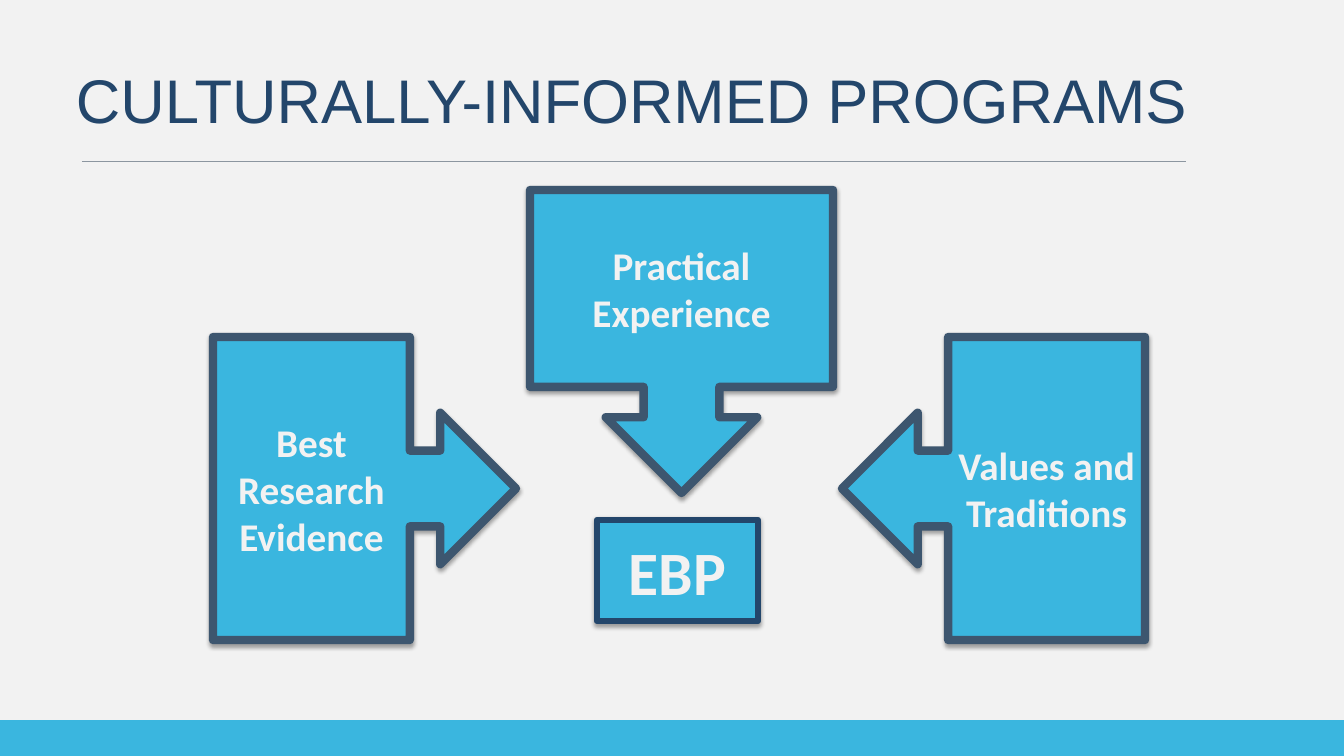
from lxml import etree
from pptx import Presentation
from pptx.dml.color import RGBColor
from pptx.enum.shapes import MSO_CONNECTOR, MSO_SHAPE as SHAPE
from pptx.enum.text import MSO_ANCHOR as ANCHOR, PP_ALIGN as ALIGN
from pptx.oxml import parse_xml
from pptx.oxml.ns import nsdecls, qn
from pptx.util import Emu, Pt

PX = 914400 / 100.8
BLUE, NAVY, SLATE, PALE, GRAY = "3AB6DF", "23466B", "3D566F", "F2F2F2", "8C96A0"
SHADOW = (
    f'<a:outerShdw {nsdecls("a")} blurRad="40000" dist="23000" dir="5400000" rotWithShape="0">'
    '<a:srgbClr val="000000"><a:alpha val="35000"/></a:srgbClr></a:outerShdw>'
)


def px(*lengths):
    return [Emu(round(length * PX)) for length in lengths]


def color(code):
    return RGBColor.from_string(code)


deck = Presentation()
deck.slide_width, deck.slide_height = px(1344, 756)
page = deck.slides.add_slide(deck.slide_layouts[6])

# Background and bottom band
for top, height, fill in [(0, 720, PALE), (720, 36, BLUE)]:
    band = page.shapes.add_shape(SHAPE.RECTANGLE, *px(0, top, 1344, height))
    band.shadow.inherit = False
    band.fill.solid()
    band.fill.fore_color.rgb = color(fill)
    band.line.fill.background()

# Title and the rule below it
rule = page.shapes.add_connector(MSO_CONNECTOR.STRAIGHT, *px(82, 161, 1186, 161))
rule.line.color.rgb = color(GRAY)
rule.line.width = Pt(0.5)
etree.SubElement(rule._element.spPr, qn("a:effectLst"))

title = page.shapes.add_textbox(*px(66, 36, 1154, 126))
title.text_frame.word_wrap = True
title.text_frame.vertical_anchor = ANCHOR.MIDDLE
title.text_frame.text = "CULTURALLY-INFORMED PROGRAMS"
font = title.text_frame.paragraphs[0].runs[0].font
font.name, font.size = "Arial", Pt(44)
font.color.rgb = color(NAVY)

# Three arrow callouts pointing at the result box
boxes = [
    (SHAPE.RIGHT_ARROW_CALLOUT, 213, 337, 303, 303, "Best Research Evidence", 28, SLATE, 6),
    (SHAPE.DOWN_ARROW_CALLOUT, 530, 190, 303, 303, "Practical Experience", 28, SLATE, 6),
    (SHAPE.LEFT_ARROW_CALLOUT, 842, 337, 303, 303, "Values and Traditions", 28, SLATE, 6),
    (SHAPE.RECTANGLE, 597, 520, 161, 101, "EBP", 44, NAVY, 4.5),
]
for kind, left, top, width, height, text, size, outline, weight in boxes:
    box = page.shapes.add_shape(kind, *px(left, top, width, height))
    box.fill.solid()
    box.fill.fore_color.rgb = color(BLUE)
    box.line.color.rgb = color(outline)
    box.line.width = Pt(weight)
    box.shadow.inherit = False
    box._element.spPr.find(qn("a:effectLst")).append(parse_xml(SHADOW))
    box.text_frame.word_wrap = True
    box.text_frame.vertical_anchor = ANCHOR.MIDDLE
    box.text_frame.text = text
    para = box.text_frame.paragraphs[0]
    para.alignment = ALIGN.CENTER
    font = para.runs[0].font
    font.name, font.size, font.bold = "Calibri", Pt(size), True
    font.color.rgb = color(PALE)

deck.save("out.pptx")
